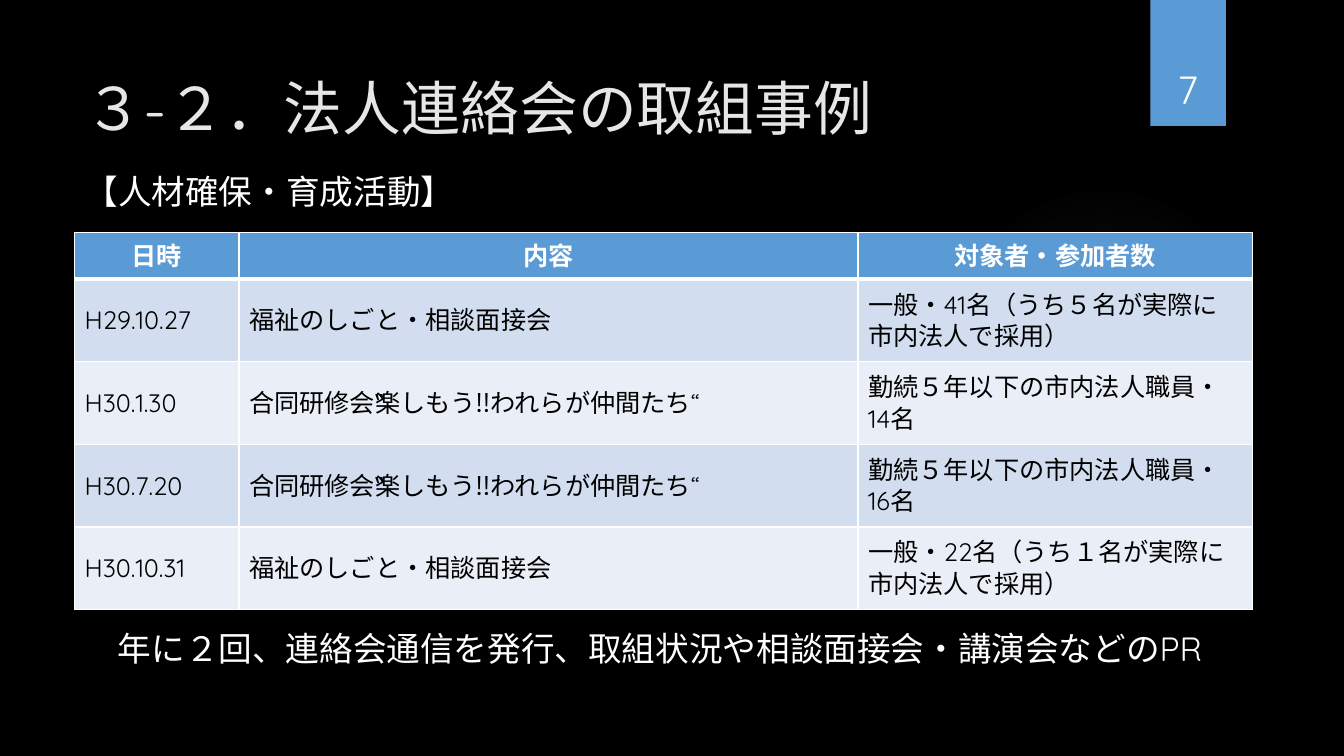
from lxml import etree
from pptx import Presentation
from pptx.dml.color import RGBColor
from pptx.enum.shapes import MSO_SHAPE
from pptx.enum.text import MSO_ANCHOR, PP_ALIGN
from pptx.oxml import parse_xml
from pptx.oxml.ns import qn
from pptx.util import Inches, Pt

LEFT, CENTER = PP_ALIGN.LEFT, PP_ALIGN.CENTER
MIDDLE, BOTTOM = MSO_ANCHOR.MIDDLE, MSO_ANCHOR.BOTTOM
NAMESPACE = "http://schemas.openxmlformats.org/drawingml/2006/main"
FONT = "Quicksand"
BLACK, WHITE, BLUE, GLOW = "000000", "FFFFFF", "5B9BD5", "8497B0"
TITLE_GRAY = "E7E6E6"
BANDS = ("D2DEEF", "EAEFF7")

TITLE = "３-２．法人連絡会の取組事例"
SECTION = "【人材確保・育成活動】"
CLOSING = "年に２回、連絡会通信を発行、取組状況や相談面接会・講演会などのPR"
PAGE_NUMBER = "7"
HEADER = ("日時", "内容", "対象者・参加者数")
EVENTS = [
    ("H29.10.27", "福祉のしごと・相談面接会", "一般・41名（うち５名が実際に市内法人で採用）"),
    ("H30.1.30", "合同研修会‟楽しもう‼われらが仲間たち“", "勤続５年以下の市内法人職員・14名"),
    ("H30.7.20", "合同研修会‟楽しもう‼われらが仲間たち“", "勤続５年以下の市内法人職員・16名"),
    ("H30.10.31", "福祉のしごと・相談面接会", "一般・22名（うち１名が実際に市内法人で採用）"),
]

MARGIN, CONTENT_WIDTH = 0.74, 11.68
TABLE_TOP, HEADER_HEIGHT, EVENT_HEIGHT = 2.31, 0.46, 0.82
COLUMN_WIDTHS = (1.63, 6.14, 3.91)
GLOW_STOPS = ((0, 7), (36, 6), (69, 0))


def color(hex_string):
    return RGBColor.from_string(hex_string)


def write(text_frame, text, size, text_color, align=LEFT, bold=False):
    paragraph = text_frame.paragraphs[0]
    paragraph.alignment = align
    run = paragraph.add_run()
    run.text = text
    run.font.size = Pt(size)
    run.font.bold = bold
    run.font.color.rgb = color(text_color)
    run.font.name = FONT
    east_asian = etree.SubElement(run._r.get_or_add_rPr(), qn("a:ea"))
    east_asian.set("typeface", FONT)


def add_text(slide, box, text, size, text_color=WHITE, align=LEFT, anchor=MIDDLE):
    text_box = slide.shapes.add_textbox(*map(Inches, box))
    text_box.text_frame.word_wrap = True
    text_box.text_frame.vertical_anchor = anchor
    write(text_box.text_frame, text, size, text_color, align)


def add_plain_shape(slide, preset, box, fill_color):
    shape = slide.shapes.add_shape(preset, *map(Inches, box))
    shape.shadow.inherit = False
    shape.line.fill.background()
    shape.fill.solid()
    shape.fill.fore_color.rgb = color(fill_color)
    return shape


def add_glow(slide):
    """Faint round light that fades to nothing at its edge."""
    glow = add_plain_shape(slide, MSO_SHAPE.OVAL, (9.41, 1.83, 3.08, 3.08), GLOW)
    stops = "".join(
        f'<a:gs pos="{position * 1000}"><a:srgbClr val="{GLOW}">'
        f'<a:alpha val="{alpha * 1000}"/></a:srgbClr></a:gs>'
        for position, alpha in GLOW_STOPS
    )
    gradient = parse_xml(
        f'<a:gradFill xmlns:a="{NAMESPACE}"><a:gsLst>{stops}</a:gsLst><a:path path="circle">'
        '<a:fillToRect l="50000" t="50000" r="50000" b="50000"/></a:path></a:gradFill>'
    )
    properties = glow._element.spPr
    properties.replace(properties.find(qn("a:solidFill")), gradient)


def set_borders(cell, bottom_width, top_width):
    properties = cell._tc.get_or_add_tcPr()
    for side, width in (("L", 1), ("R", 1), ("T", top_width), ("B", bottom_width)):
        properties.append(parse_xml(
            f'<a:ln{side} xmlns:a="{NAMESPACE}" w="{Pt(width)}"><a:solidFill>'
            f'<a:srgbClr val="{WHITE}"/></a:solidFill></a:ln{side}>'
        ))


def add_event_table(slide):
    rows = [HEADER] + EVENTS
    heights = [HEADER_HEIGHT] + [EVENT_HEIGHT] * len(EVENTS)
    box = (MARGIN, TABLE_TOP, CONTENT_WIDTH, sum(heights))
    table = slide.shapes.add_table(len(rows), len(HEADER), *map(Inches, box)).table
    for column, width in zip(table.columns, COLUMN_WIDTHS):
        column.width = Inches(width)
    for row_index, (texts, height) in enumerate(zip(rows, heights)):
        table.rows[row_index].height = Inches(height)
        is_header = row_index == 0
        for column_index, text in enumerate(texts):
            cell = table.cell(row_index, column_index)
            set_borders(cell, 3 if is_header else 1, 3 if row_index == 1 else 1)
            cell.fill.solid()
            cell.fill.fore_color.rgb = color(BLUE if is_header else BANDS[(row_index - 1) % 2])
            cell.vertical_anchor = MIDDLE
            write(cell.text_frame, text, 18, WHITE if is_header else BLACK,
                  CENTER if is_header else LEFT, is_header)


def main():
    presentation = Presentation()
    presentation.slide_width, presentation.slide_height = Inches(13.33), Inches(7.5)
    slide = presentation.slides.add_slide(presentation.slide_layouts[6])
    slide.background.fill.solid()
    slide.background.fill.fore_color.rgb = color(BLACK)

    add_glow(slide)
    add_plain_shape(slide, MSO_SHAPE.RECTANGLE, (11.41, 0, 0.75, 1.25), BLUE)
    add_text(slide, (MARGIN, 0.67, CONTENT_WIDTH, 0.79), TITLE, 42, TITLE_GRAY)
    add_text(slide, (MARGIN, 1.67, CONTENT_WIDTH, 0.46), SECTION, 24)
    add_event_table(slide)
    add_text(slide, (1.07, 6.2, 11.35, 0.46), CLOSING, 24)
    add_text(slide, (11.32, 0.32, 0.92, 0.84), PAGE_NUMBER, 28, align=CENTER, anchor=BOTTOM)
    presentation.save("out.pptx")


if __name__ == "__main__":
    main()
